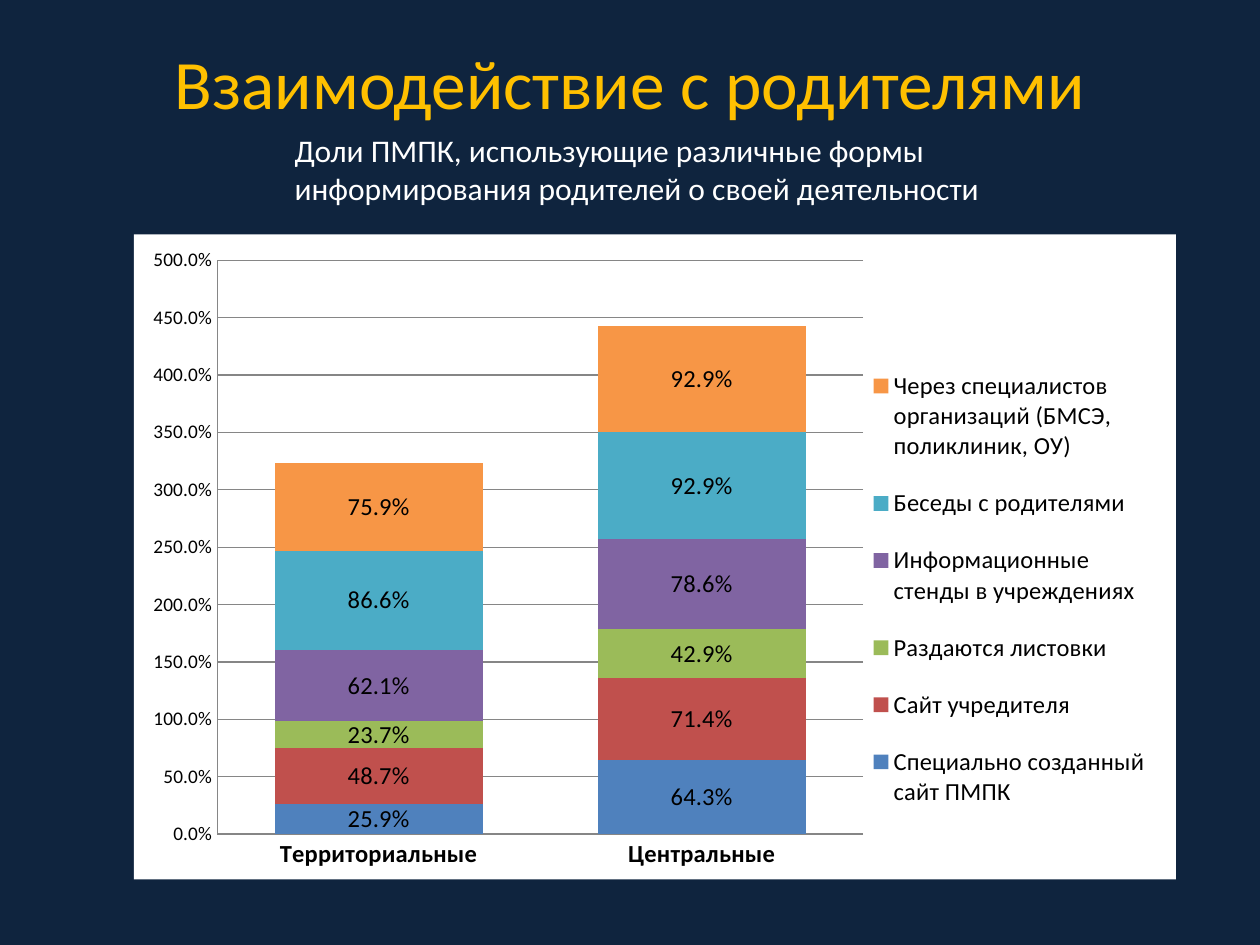
from dataclasses import dataclass

from lxml import etree
from pptx import Presentation
from pptx.chart.data import CategoryChartData
from pptx.dml.color import RGBColor
from pptx.enum import chart as charts, text
from pptx.oxml import parse_xml
from pptx.oxml.ns import nsdecls, qn
from pptx.util import Pt


@dataclass(frozen=True)
class Theme:
    font: str = "Calibri"
    background: str = "0F243E"
    title: str = "FFC000"
    light: str = "FFFFFF"
    dark: str = "000000"
    grid: str = "868686"
    series: tuple = ("4F81BD", "C0504D", "9BBB59", "8064A2", "4BACC6", "F79646")
    title_size: float = 39.6
    subtitle_size: float = 18
    label_size: float = 14
    axis_size: float = 11


PERCENT = "###0.0%"
CATEGORIES = ["Территориальные", "Центральные"]
SHARES = {
    "Специально созданный сайт ПМПК": (0.259, 0.643),
    "Сайт учредителя": (0.487, 0.714),
    "Раздаются листовки": (0.237, 0.429),
    "Информационные стенды в учреждениях": (0.621, 0.786),
    "Беседы с родителями": (0.866, 0.929),
    "Через специалистов организаций (БМСЭ, поликлиник, ОУ)": (0.759, 0.929),
}


def paint(fill, color):
    fill.solid()
    fill.fore_color.rgb = RGBColor.from_string(color)


def manual_layout(x, y, w, h, inner=False):
    """Chart layout element; the values are fractions of the chart area."""
    layout = etree.Element(qn("c:layout"))
    manual = etree.SubElement(layout, qn("c:manualLayout"))
    settings = [("layoutTarget", "inner")] if inner else []
    settings += [("xMode", "edge"), ("yMode", "edge")]
    settings += [("x", x), ("y", y), ("w", w), ("h", h)]
    for name, value in settings:
        etree.SubElement(manual, qn(f"c:{name}")).set("val", str(value))
    return layout


def drop_layout(parent):
    for old in parent.findall(qn("c:layout")):
        parent.remove(old)


class Deck:
    def __init__(self, theme, width, height):
        self.theme = theme
        self.deck = Presentation()
        self.deck.slide_width, self.deck.slide_height = Pt(width), Pt(height)
        self.page = None

    def add_page(self):
        self.page = self.deck.slides.add_slide(self.deck.slide_layouts[6])
        paint(self.page.background.fill, self.theme.background)

    def style(self, font, size, color, bold=False):
        font.name, font.size, font.bold = self.theme.font, Pt(size), bold
        font.color.rgb = RGBColor.from_string(color)

    def add_text(self, words, bounds, size, color,
                 align=text.PP_ALIGN.LEFT, anchor=text.MSO_ANCHOR.TOP):
        box = self.page.shapes.add_textbox(*map(Pt, bounds))
        frame = box.text_frame
        frame.word_wrap = True
        frame.vertical_anchor = anchor
        para = frame.paragraphs[0]
        para.alignment = align
        span = para.add_run()
        span.text = words
        self.style(span.font, size, color)

    def add_stacked_chart(self, categories, shares, bounds):
        theme = self.theme
        data = CategoryChartData(number_format=PERCENT)
        data.categories = categories
        for name, values in shares.items():
            data.add_series(name, values)
        chart = self.page.shapes.add_chart(
            charts.XL_CHART_TYPE.COLUMN_STACKED, *map(Pt, bounds), data).chart
        chart.has_title = False
        self.style(chart.font, theme.axis_size, theme.dark)
        self.fill_chart_area(chart, theme.light)

        plot = chart.plots[0]
        plot.gap_width, plot.overlap, plot.vary_by_categories = 55, 100, False
        for series, color in zip(plot.series, theme.series):
            paint(series.format.fill, color)
            labels = series.data_labels
            labels.show_value = True
            labels.number_format = PERCENT
            labels.number_format_is_linked = False
            self.style(labels.font, theme.label_size, theme.dark)

        self.style_axes(chart)
        self.place_legend(chart)

    def fill_chart_area(self, chart, color):
        area = parse_xml(
            f'<c:spPr {nsdecls("c", "a")}><a:solidFill><a:srgbClr val="{color}"/>'
            '</a:solidFill><a:ln><a:noFill/></a:ln></c:spPr>')
        chart.element.find(qn("c:chart")).addnext(area)

    def style_axes(self, chart):
        theme = self.theme
        lines = [chart.value_axis.major_gridlines.format.line]
        for axis in (chart.category_axis, chart.value_axis):
            axis.major_tick_mark = axis.minor_tick_mark = charts.XL_TICK_MARK.NONE
            lines.append(axis.format.line)
        for line in lines:
            line.color.rgb = RGBColor.from_string(theme.grid)
            line.width = Pt(0.75)
        self.style(chart.category_axis.tick_labels.font,
                   theme.label_size, theme.dark, bold=True)
        scale = chart.value_axis
        scale.minimum_scale, scale.maximum_scale, scale.major_unit = 0, 5, 0.5
        scale.tick_labels.number_format = PERCENT
        scale.tick_labels.number_format_is_linked = False
        self.style(scale.tick_labels.font, theme.axis_size, theme.dark)

    def place_legend(self, chart):
        """Put the legend to the right of a fixed plot area."""
        chart.has_legend = True
        legend = chart.legend
        legend.position = charts.XL_LEGEND_POSITION.RIGHT
        legend.include_in_layout = False
        self.style(legend.font, self.theme.label_size, self.theme.dark)

        chart_root = chart.element.find(qn("c:chart"))
        plot_area = chart_root.find(qn("c:plotArea"))
        drop_layout(plot_area)
        plot_area.insert(0, manual_layout(0.08, 0.04, 0.62, 0.89, inner=True))
        key = chart_root.find(qn("c:legend"))
        drop_layout(key)
        key.find(qn("c:legendPos")).addnext(manual_layout(0.7, 0.17, 0.28, 0.76))


def main():
    theme = Theme()
    slides = Deck(theme, 720, 540)
    slides.add_page()
    slides.add_text("Взаимодействие с родителями", (36, 21.6, 648, 49.7),
                    theme.title_size, theme.title,
                    text.PP_ALIGN.CENTER, text.MSO_ANCHOR.MIDDLE)
    slides.add_stacked_chart(CATEGORIES, SHARES, (76.5, 134, 595.5, 368.5))
    slides.add_text("Доли ПМПК, использующие различные формы "
                    "информирования родителей о своей деятельности",
                    (161.3, 71.3, 419.8, 51), theme.subtitle_size, theme.light)
    slides.deck.save("out.pptx")


if __name__ == "__main__":
    main()
